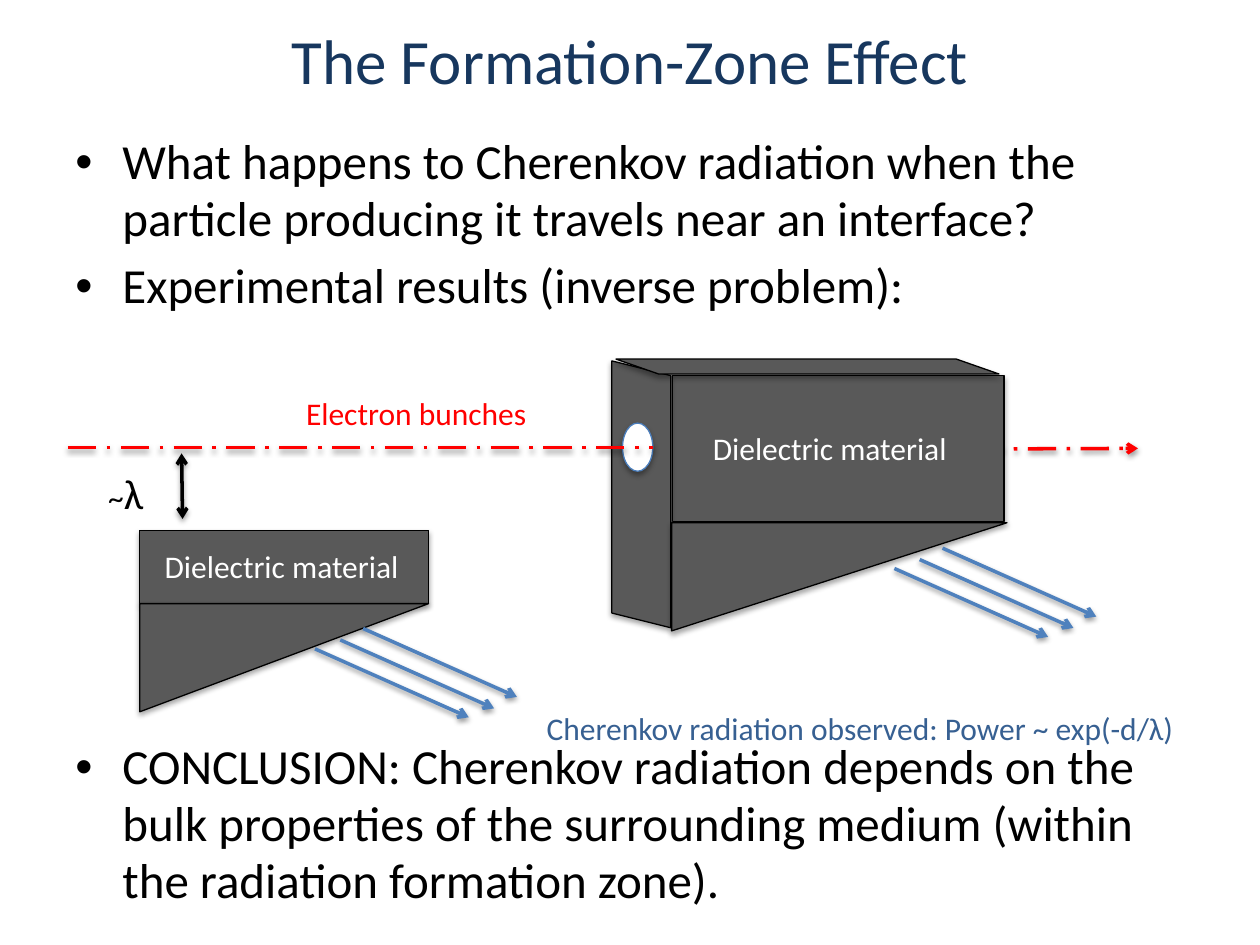
from dataclasses import dataclass

from lxml import etree
from pptx import Presentation
from pptx.dml.color import RGBColor
from pptx.enum.dml import MSO_LINE
from pptx.enum.shapes import MSO_CONNECTOR, MSO_SHAPE
from pptx.enum.text import MSO_ANCHOR, PP_ALIGN
from pptx.oxml.ns import qn
from pptx.util import Cm, Pt

STRAIGHT = MSO_CONNECTOR.STRAIGHT
DASH_DOT = MSO_LINE.LONG_DASH_DOT
SLAB = MSO_SHAPE.PARALLELOGRAM
WEDGE = MSO_SHAPE.RIGHT_TRIANGLE
OVAL = MSO_SHAPE.OVAL

NAVY = RGBColor(0x17, 0x37, 0x5E)
BLACK = RGBColor(0, 0, 0)
WHITE = RGBColor(0xFF, 0xFF, 0xFF)
GRAY = RGBColor(0x59, 0x59, 0x59)
RED = RGBColor(0xFF, 0, 0)
RAY_BLUE = RGBColor(0x4F, 0x81, 0xBD)
HOLE_BLUE = RGBColor(0x4B, 0x7E, 0xBC)
NOTE_BLUE = RGBColor(0x37, 0x60, 0x92)


@dataclass
class Solid:
    """One face of the dielectric, or the hole in it; lengths in cm."""
    kind: MSO_SHAPE
    box: tuple[float, float, float, float]
    fill: RGBColor = GRAY
    line: RGBColor = BLACK
    flip: str = ""
    rotation: float = 0
    slant: float | None = None


@dataclass
class Ray:
    start: tuple[float, float]
    end: tuple[float, float]
    color: RGBColor
    ends: tuple[str, ...] = ("tailEnd",)
    dash: MSO_LINE | None = None


@dataclass
class Label:
    box: tuple[float, float, float, float]
    runs: tuple[tuple[str, int], ...]
    color: RGBColor


def style_font(font, size: int, color: RGBColor) -> None:
    for name, value in {"name": "Calibri", "size": Pt(size)}.items():
        setattr(font, name, value)
    font.color.rgb = color


def add_shadow(item, opacity: int, distance: float) -> None:
    effects = etree.SubElement(item._element.spPr, qn("a:effectLst"))
    shadow = etree.SubElement(effects, qn("a:outerShdw"), blurRad=str(Pt(3.1)),
                              dist=str(Pt(distance)), dir="5400000", rotWithShape="0")
    color = etree.SubElement(shadow, qn("a:srgbClr"), val="000000")
    etree.SubElement(color, qn("a:alpha"), val=str(opacity * 1000))


def draw_solid(slide, solid: Solid) -> None:
    shape = slide.shapes.add_shape(solid.kind, *map(Cm, solid.box))
    shape.fill.solid()
    shape.fill.fore_color.rgb = solid.fill
    shape.line.color.rgb = solid.line
    shape.line.width = Pt(0.75)
    shape.rotation = solid.rotation
    if solid.slant is not None:
        shape.adjustments[0] = solid.slant
    if solid.flip:
        shape._element.spPr.find(qn("a:xfrm")).set(solid.flip, "1")
    add_shadow(shape, 35, 1.8)


def draw_ray(slide, ray: Ray) -> None:
    connector = slide.shapes.add_connector(STRAIGHT, *map(Cm, ray.start + ray.end))
    connector.line.color.rgb = ray.color
    connector.line.width = Pt(2)
    if ray.dash:
        connector.line.dash_style = ray.dash
    outline = connector.line._get_or_add_ln()
    for end in ray.ends:
        etree.SubElement(outline, qn(f"a:{end}"), type="arrow")
    add_shadow(connector, 38, 1.6)


def draw_radiation(slide, left: float, top: float) -> None:
    """Three parallel rays leaving the slanted face of a wedge."""
    for dx, dy in ((0, 0), (-0.46, 0.23), (-0.97, 0.41)):
        x, y = left + dx, top + dy
        draw_ray(slide, Ray((x, y), (x + 3.1, y + 1.38), RAY_BLUE))


def draw_label(slide, label: Label) -> None:
    frame = slide.shapes.add_textbox(*map(Cm, label.box)).text_frame
    frame.word_wrap = False
    for text, size in label.runs:
        run = frame.paragraphs[0].add_run()
        run.text = text
        style_font(run.font, size, label.color)


def draw_bullets(slide, points: tuple[tuple[str, float], ...]) -> None:
    frame = slide.shapes.add_textbox(Cm(1.27), Cm(2.57), Cm(22.86), Cm(16.48)).text_frame
    frame.word_wrap = True
    for index, (text, space_before) in enumerate(points):
        paragraph = frame.add_paragraph() if index else frame.paragraphs[0]
        paragraph.text = text
        properties = paragraph._p.get_or_add_pPr()
        properties.set("marL", str(Cm(0.95)))
        properties.set("indent", str(-Cm(0.95)))
        etree.SubElement(properties, qn("a:buFont"), typeface="Arial")
        etree.SubElement(properties, qn("a:buChar"), char="•")
        paragraph.line_spacing = 0.97
        paragraph.space_before = Pt(space_before)
        style_font(paragraph.font, 28, BLACK)


def main() -> None:
    deck = Presentation()
    deck.slide_width, deck.slide_height = Cm(25.4), Cm(19.05)
    slide = deck.slides.add_slide(deck.slide_layouts[5])

    # Title
    title = slide.shapes.title
    placement = {"left": Cm(1.27), "top": Cm(0), "width": Cm(22.86), "height": Cm(2.41)}
    for name, value in placement.items():
        setattr(title, name, value)
    title.text_frame.text = "The Formation-Zone Effect"
    title.text_frame.vertical_anchor = MSO_ANCHOR.MIDDLE
    heading = title.text_frame.paragraphs[0]
    heading.alignment = PP_ALIGN.CENTER
    style_font(heading.runs[0].font, 36, NAVY)

    # Statements, with room for the diagram before the conclusion
    draw_bullets(slide, (
        ("What happens to Cherenkov radiation when the particle producing it "
         "travels near an interface?", 0),
        ("Experimental results (inverse problem):", 6),
        ("CONCLUSION: Cherenkov radiation depends on the bulk properties of the "
         "surrounding medium (within the radiation formation zone).", 242),
    ))

    # Dielectric below the beam, and the beam leaving the pierced one
    draw_solid(slide, Solid(SLAB, (2.82, 10.69, 5.82, 1.47), slant=0))
    draw_ray(slide, Ray((14.33, 9.07), (22.94, 9.04), RED, dash=DASH_DOT))
    draw_solid(slide, Solid(WEDGE, (2.82, 12.17, 5.82, 2.18), flip="flipV"))
    draw_radiation(slide, 7.32, 12.67)
    draw_ray(slide, Ray((3.68, 10.46), (3.66, 9.14), BLACK, ("headEnd", "tailEnd")))

    # Dielectric pierced by the beam: front, side, top, hole
    for solid in (
        Solid(SLAB, (13.56, 7.57, 6.68, 2.95), slant=0),
        Solid(SLAB, (10.24, 9.37, 5.38, 1.19), rotation=270),
        Solid(SLAB, (12.42, 7.24, 7.72, 0.3), flip="flipH", slant=2.86),
        Solid(OVAL, (12.55, 8.53, 0.61, 0.97), WHITE, HOLE_BLUE),
    ):
        draw_solid(slide, solid)
    draw_ray(slide, Ray((1.37, 9.02), (13.16, 9.02), RED, (), DASH_DOT))
    draw_solid(slide, Solid(WEDGE, (13.54, 10.54, 6.76, 2.18), flip="flipV"))
    draw_radiation(slide, 19, 11.05)

    # Labels
    material = (("Dielectric material", 18),)
    for label in (
        Label((1.93, 9.3, 1.22, 1.27), (("~", 18), ("λ", 24)), BLACK),
        Label((10.77, 14.17, 13.28, 1.02),
              (("Cherenkov radiation observed: Power ~ exp(-d/λ)", 18),), NOTE_BLUE),
        Label((5.92, 7.82, 5, 1.02), (("Electron bunches", 18),), RED),
        Label((14.12, 8.53, 5.28, 1.02), material, WHITE),
        Label((3.07, 10.9, 5.28, 1.02), material, WHITE),
    ):
        draw_label(slide, label)

    deck.save("out.pptx")


if __name__ == "__main__":
    main()
